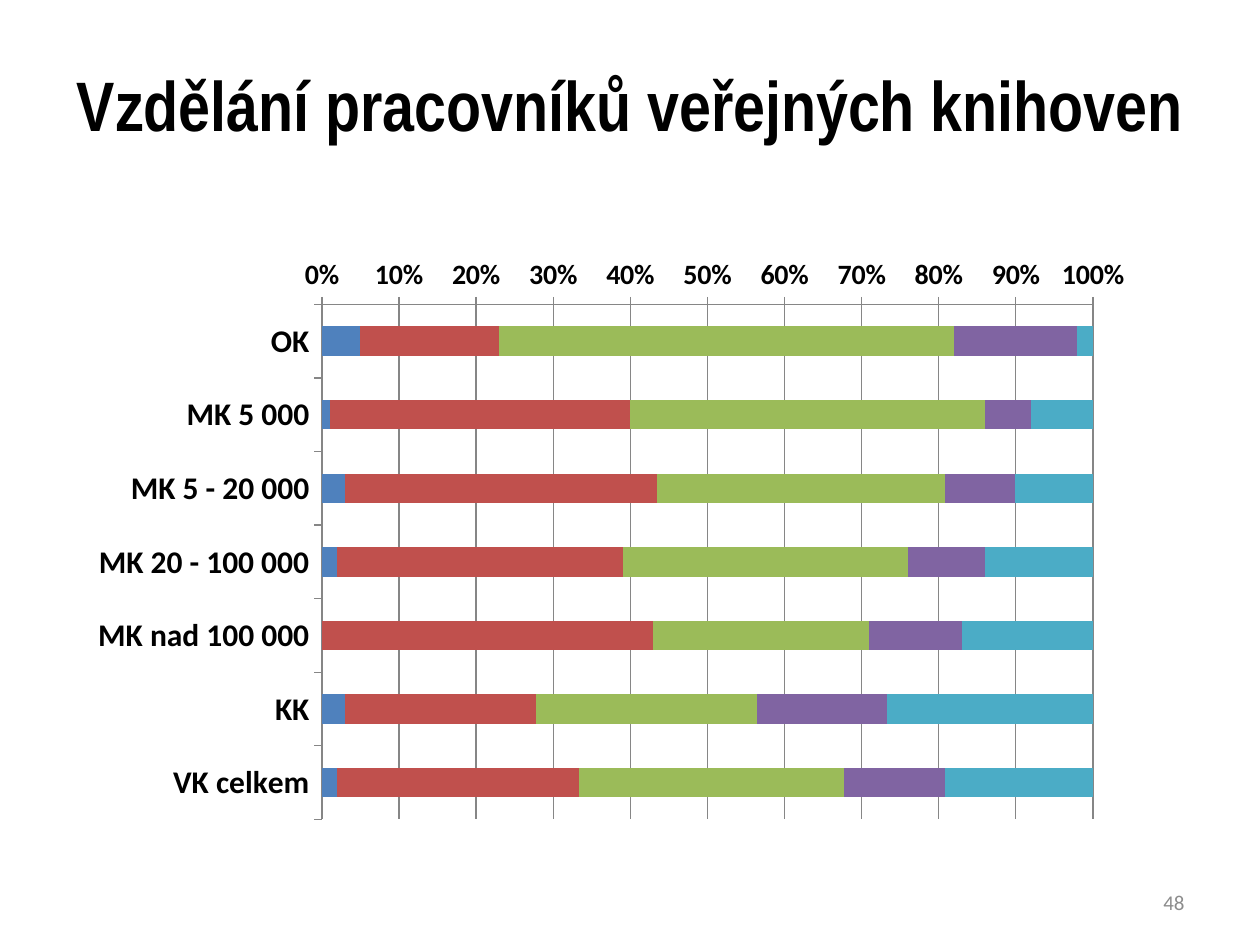
"""Builds the slide on the education of public library staff."""
from dataclasses import dataclass

import pptx
import pptx.chart.data
import pptx.dml.color
import pptx.enum.chart
import pptx.enum.text
import pptx.oxml
import pptx.util


@dataclass(frozen=True)
class Theme:
    title_font: str = "Arial Narrow"
    body_font: str = "Calibri"
    text: str = "000000"
    muted: str = "8C8C8C"
    grid: str = "868686"
    series: tuple = ("4F81BD", "C0504D", "9BBB59", "8064A2", "4BACC6")
    title_size: int = 40
    category_size: int = 18
    value_size: int = 16
    number_size: int = 12


CATEGORIES = ["OK", "MK 5 000", "MK 5 - 20 000", "MK 20 - 100 000",
              "MK nad 100 000", "KK", "VK celkem"]
EDUCATION_SHARES = [
    (5, 1, 3, 2, 0, 3, 2),
    (18, 39, 40, 37, 43, 25, 31),
    (59, 46, 37, 37, 28, 29, 34),
    (16, 6, 9, 10, 12, 17, 13),
    (2, 8, 10, 14, 17, 27, 19),
]
PLOT_SHARES = {"x": 0.23, "y": 0.09, "w": 0.72, "h": 0.79}


class SlideBuilder:
    def __init__(self, presentation, theme):
        self.presentation = presentation
        self.theme = theme
        self.slide = presentation.slides.add_slide(presentation.slide_layouts[6])

    def place(self, left, top, width, height):
        across, down = self.presentation.slide_width, self.presentation.slide_height
        return (round(left * across), round(top * down),
                round(width * across), round(height * down))

    def style_font(self, font, name, size, color, bold=False):
        font.name = name
        font.size = pptx.util.Pt(size)
        font.bold = bold
        font.color.rgb = pptx.dml.color.RGBColor.from_string(color)

    def text(self, words, area, alignment, *style):
        text_frame = self.slide.shapes.add_textbox(*self.place(*area)).text_frame
        text_frame.word_wrap = True
        text_frame.vertical_anchor = pptx.enum.text.MSO_ANCHOR.MIDDLE
        text_frame.text = words
        paragraph = text_frame.paragraphs[0]
        paragraph.alignment = alignment
        self.style_font(paragraph.runs[0].font, *style)

    def axis(self, axis, size):
        axis.major_tick_mark = pptx.enum.chart.XL_TICK_MARK.OUTSIDE
        self.style_font(axis.tick_labels.font, self.theme.body_font, size,
                        self.theme.text, True)
        self.line(axis.format.line)

    def line(self, line):
        line.color.rgb = pptx.dml.color.RGBColor.from_string(self.theme.grid)
        line.width = pptx.util.Pt(0.75)

    def stacked_bars(self, categories, rows, area, plot_shares):
        data = pptx.chart.data.CategoryChartData()
        data.categories = categories
        for values in rows:
            data.add_series("", values)
        chart = self.slide.shapes.add_chart(
            pptx.enum.chart.XL_CHART_TYPE.BAR_STACKED_100,
            *self.place(*area), data).chart
        chart.has_title = False
        chart.has_legend = False
        plot = chart.plots[0]
        plot.gap_width, plot.overlap, plot.vary_by_categories = 150, 100, False
        for series, color in zip(plot.series, self.theme.series):
            series.format.fill.solid()
            series.format.fill.fore_color.rgb = pptx.dml.color.RGBColor.from_string(color)
        self.axis(chart.category_axis, self.theme.category_size)
        chart.category_axis.reverse_order = True
        value_axis = chart.value_axis
        self.axis(value_axis, self.theme.value_size)
        value_axis.minimum_scale, value_axis.maximum_scale = 0, 1
        value_axis.major_unit = 0.1
        value_axis.tick_labels.number_format = "0%"
        value_axis.tick_labels.number_format_is_linked = False
        value_axis.has_major_gridlines = True
        self.line(value_axis.major_gridlines.format.line)
        self.plot_layout(chart, plot_shares)

    def plot_layout(self, chart, shares):
        plot_area = chart.element.chart.plotArea
        for old_layout in plot_area.xpath("c:layout"):
            plot_area.remove(old_layout)
        modes = "".join(f'<c:{key}Mode val="edge"/>' for key in "xy")
        sizes = "".join(f'<c:{key} val="{share}"/>' for key, share in shares.items())
        plot_area.insert(0, pptx.oxml.parse_xml(
            '<c:layout xmlns:c="http://schemas.openxmlformats.org/drawingml/2006/chart">'
            f'<c:manualLayout><c:layoutTarget val="inner"/>{modes}{sizes}'
            '</c:manualLayout></c:layout>'))


def main():
    presentation = pptx.Presentation()
    presentation.slide_width = pptx.util.Inches(10)
    presentation.slide_height = pptx.util.Inches(7.5)
    theme = Theme()
    builder = SlideBuilder(presentation, theme)
    align = pptx.enum.text.PP_ALIGN
    builder.text("Vzdělání pracovníků veřejných knihoven", (0.035, 0.03, 0.93, 0.16),
                 align.CENTER, theme.title_font, theme.title_size, theme.text, True)
    builder.stacked_bars(CATEGORIES, EDUCATION_SHARES, (0.06, 0.26, 0.85, 0.69),
                         PLOT_SHARES)
    builder.text("48", (0.72, 0.93, 0.23, 0.05),
                 align.RIGHT, theme.body_font, theme.number_size, theme.muted)
    presentation.save("out.pptx")


if __name__ == "__main__":
    main()
